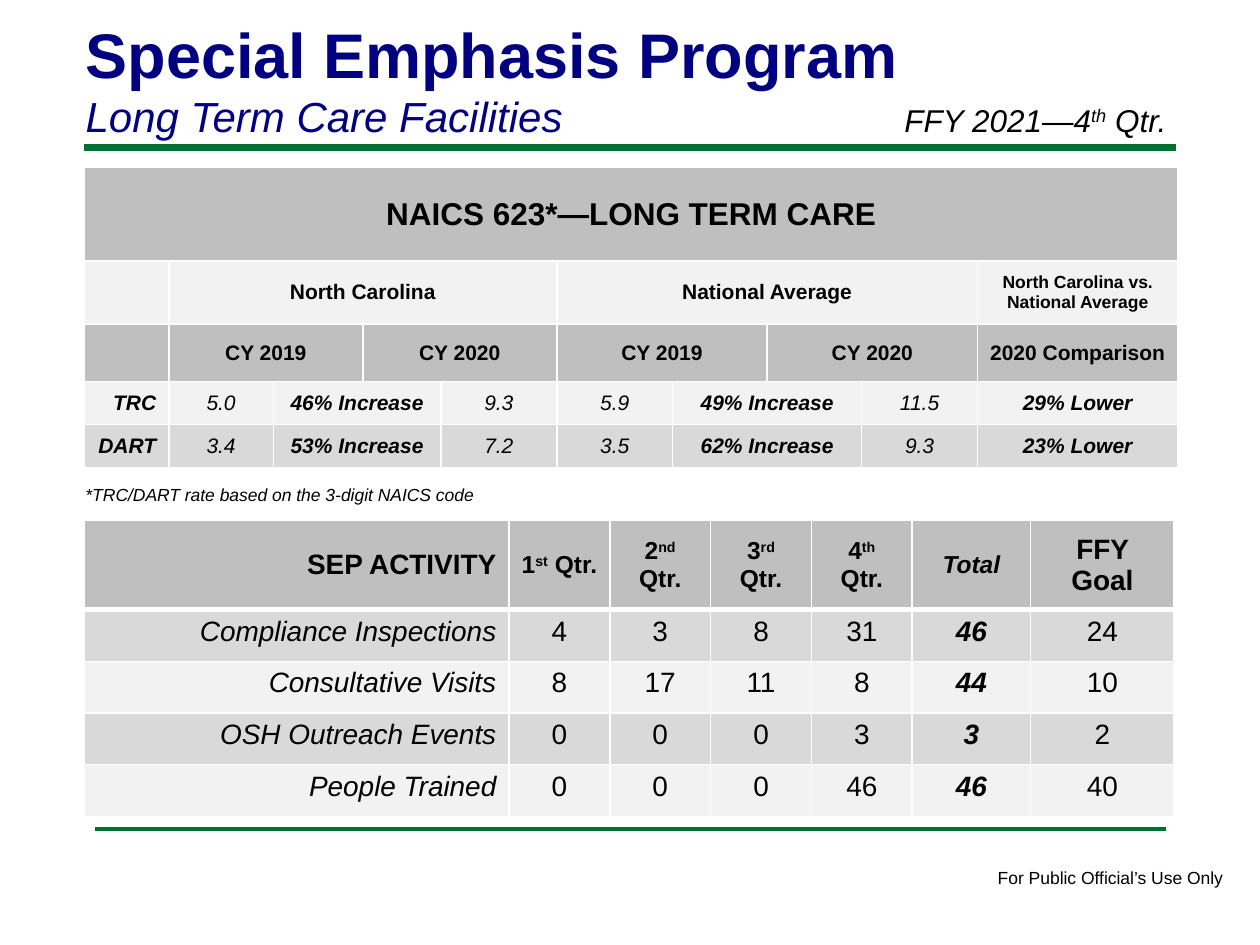
import pptx
import pptx.dml.color
import pptx.enum.shapes
import pptx.enum.text
import pptx.oxml
import pptx.oxml.ns
import pptx.util
from lxml import etree

Inches, Pt = pptx.util.Inches, pptx.util.Pt
Align = pptx.enum.text.PP_ALIGN
Anchor = pptx.enum.text.MSO_ANCHOR
COLORS = {"navy": "000080", "green": "007030", "black": "000000", "white": "FFFFFF",
          "header": "BFBFBF", "dark": "D9D9D9", "light": "F2F2F2"}
LEFT, WIDTH = 0.67, 8.67

# Each row lists (text, columns spanned)
RATE_COLUMNS = [0.67, 0.83, 0.71, 0.62, 0.92, 0.92, 0.75, 0.75, 0.92, 1.59]
RATE_HEIGHTS = [0.74, 0.5, 0.46, 0.34, 0.34]
RATE_FILLS = ["header", "light", "header", "light", "dark"]
RATE_ROWS = [
    [("NAICS 623*—LONG TERM CARE", 10)],
    [("", 1), ("North Carolina", 4), ("National Average", 4),
     ("North Carolina vs. National Average", 1)],
    [("", 1), ("CY 2019", 2), ("CY 2020", 2), ("CY 2019", 2), ("CY 2020", 2),
     ("2020 Comparison", 1)],
    [("TRC", 1), ("5.0", 1), ("46% Increase", 2), ("9.3", 1),
     ("5.9", 1), ("49% Increase", 2), ("11.5", 1), ("29% Lower", 1)],
    [("DART", 1), ("3.4", 1), ("53% Increase", 2), ("7.2", 1),
     ("3.5", 1), ("62% Increase", 2), ("9.3", 1), ("23% Lower", 1)],
]
# Text between carets is superscript
ACTIVITY_COLUMNS = [3.37, 0.8, 0.8, 0.8, 0.8, 0.94, 1.14]
ACTIVITY_HEIGHTS = [0.71] + [0.41] * 4
ACTIVITY_ROWS = [
    ["SEP ACTIVITY", "1^st^ Qtr.", "2^nd^ Qtr.", "3^rd^ Qtr.", "4^th^ Qtr.", "Total", "FFY Goal"],
    ["Compliance Inspections", "4", "3", "8", "31", "46", "24"],
    ["Consultative Visits", "8", "17", "11", "8", "44", "10"],
    ["OSH Outreach Events", "0", "0", "0", "3", "3", "2"],
    ["People Trained", "0", "0", "0", "46", "46", "40"],
]


def color(name):
    return pptx.dml.color.RGBColor.from_string(COLORS[name])


def write(paragraph, text, size=12, bold=False, italic=False, fill="black", align=Align.LEFT):
    paragraph.alignment = align
    for index, part in enumerate(text.split("^")):
        run = paragraph.add_run()
        run.text = part
        font = run.font
        font.name, font.size, font.bold, font.italic = "Arial", Pt(size), bold, italic
        font.color.rgb = color(fill)
        if index % 2:
            run._r.get_or_add_rPr().set("baseline", "30000")


def add_text(slide, text, left, top, width, height, wrap=True, **style):
    frame = slide.shapes.add_textbox(*map(Inches, (left, top, width, height))).text_frame
    frame.word_wrap = wrap
    frame.auto_size = pptx.enum.text.MSO_AUTO_SIZE.SHAPE_TO_FIT_TEXT
    write(frame.paragraphs[0], text, **style)


def add_rule(slide, left, right, top, weight):
    line = slide.shapes.add_connector(pptx.enum.shapes.MSO_CONNECTOR.STRAIGHT,
                                      *map(Inches, (left, top, right, top)))
    line.line.color.rgb = color("green")
    line.line.width = Pt(weight)
    etree.SubElement(line._element.spPr, pptx.oxml.ns.qn("a:effectLst"))


def add_title(slide, title, subtitle):
    shape = slide.shapes.title
    shape.left, shape.top, shape.width, shape.height = map(Inches, (0.58, 0.06, 8.25, 1.11))
    frame = shape.text_frame
    frame.vertical_anchor = Anchor.BOTTOM
    frame.auto_size = pptx.enum.text.MSO_AUTO_SIZE.NONE
    write(frame.paragraphs[0], title, size=36, bold=True, fill="navy")
    write(frame.add_paragraph(), subtitle, size=24, italic=True, fill="navy")


def format_cell(cell, fill, bottom=1):
    cell.fill.solid()
    cell.fill.fore_color.rgb = color(fill)
    properties = cell._tc.get_or_add_tcPr()
    for index, (side, weight) in enumerate(zip("LRTB", (1, 1, 1, bottom))):
        properties.insert(index, pptx.oxml.parse_xml(
            f'<a:ln{side} {pptx.oxml.ns.nsdecls("a")} w="{Pt(weight)}"><a:solidFill>'
            f'<a:srgbClr val="{COLORS["white"]}"/></a:solidFill></a:ln{side}>'))


def add_table(slide, top, columns, heights):
    table = slide.shapes.add_table(len(heights), len(columns), Inches(LEFT), Inches(top),
                                   Inches(WIDTH), Inches(sum(heights))).table
    table.first_row = table.horz_banding = False
    for column, width in zip(table.columns, columns):
        column.width = Inches(width)
    for row, height in zip(table.rows, heights):
        row.height = Inches(height)
    return table


def add_rate_table(slide):
    table = add_table(slide, 1.33, RATE_COLUMNS, RATE_HEIGHTS)
    for row, (entries, fill) in enumerate(zip(RATE_ROWS, RATE_FILLS)):
        column = 0
        for text, span in entries:
            for offset in range(span):
                format_cell(table.cell(row, column + offset), fill)
            cell = table.cell(row, column)
            if span > 1:
                cell.merge(table.cell(row, column + span - 1))
            cell.vertical_anchor = Anchor.MIDDLE
            is_data = row > 2
            is_rate = is_data and text.replace(".", "").isdigit()
            size = 18 if row == 0 else 10 if "vs." in text else 12
            if text:
                write(cell.text_frame.paragraphs[0], text, size=size, bold=not is_rate,
                      italic=is_data,
                      align=Align.RIGHT if is_data and column == 0 else Align.CENTER)
            column += span


def add_activity_table(slide):
    table = add_table(slide, 4.13, ACTIVITY_COLUMNS, ACTIVITY_HEIGHTS)
    for row, entries in enumerate(ACTIVITY_ROWS):
        is_header = row == 0
        fill = "header" if is_header else "dark" if row % 2 else "light"
        for column, text in enumerate(entries):
            cell = table.cell(row, column)
            format_cell(cell, fill, bottom=3 if is_header else 1)
            cell.vertical_anchor = Anchor.MIDDLE if is_header else Anchor.TOP
            is_total = column == 5
            write(cell.text_frame.paragraphs[0], text,
                  size=14 if is_header and 0 < column < 6 else 16,
                  bold=is_header or is_total,
                  italic=is_total or (column == 0 and not is_header),
                  align=Align.CENTER if column else Align.RIGHT)


def main():
    presentation = pptx.Presentation()
    presentation.slide_width, presentation.slide_height = Inches(10), Inches(7.5)
    slide = presentation.slides.add_slide(presentation.slide_layouts[5])

    # Frame: rules and footer
    add_rule(slide, LEFT, 10 - LEFT, 1.17, 4)
    add_rule(slide, 0.75, 9.25, 6.58, 2)
    add_text(slide, "For Public Official’s Use Only", 7.82, 6.83, 2.01, 0.27, wrap=False, size=10)

    # Heading
    add_title(slide, "Special Emphasis Program", "Long Term Care Facilities")
    add_text(slide, "FFY 2021—4^th^ Qtr.", 7.08, 0.75, 2.5, 0.4, size=18, italic=True)

    # Tables and footnote
    add_activity_table(slide)
    add_rate_table(slide)
    add_text(slide, "*TRC/DART rate based on the 3-digit NAICS code", 0.58, 3.79, 3.38, 0.27,
             wrap=False, size=10, italic=True)

    presentation.save("out.pptx")


if __name__ == "__main__":
    main()
